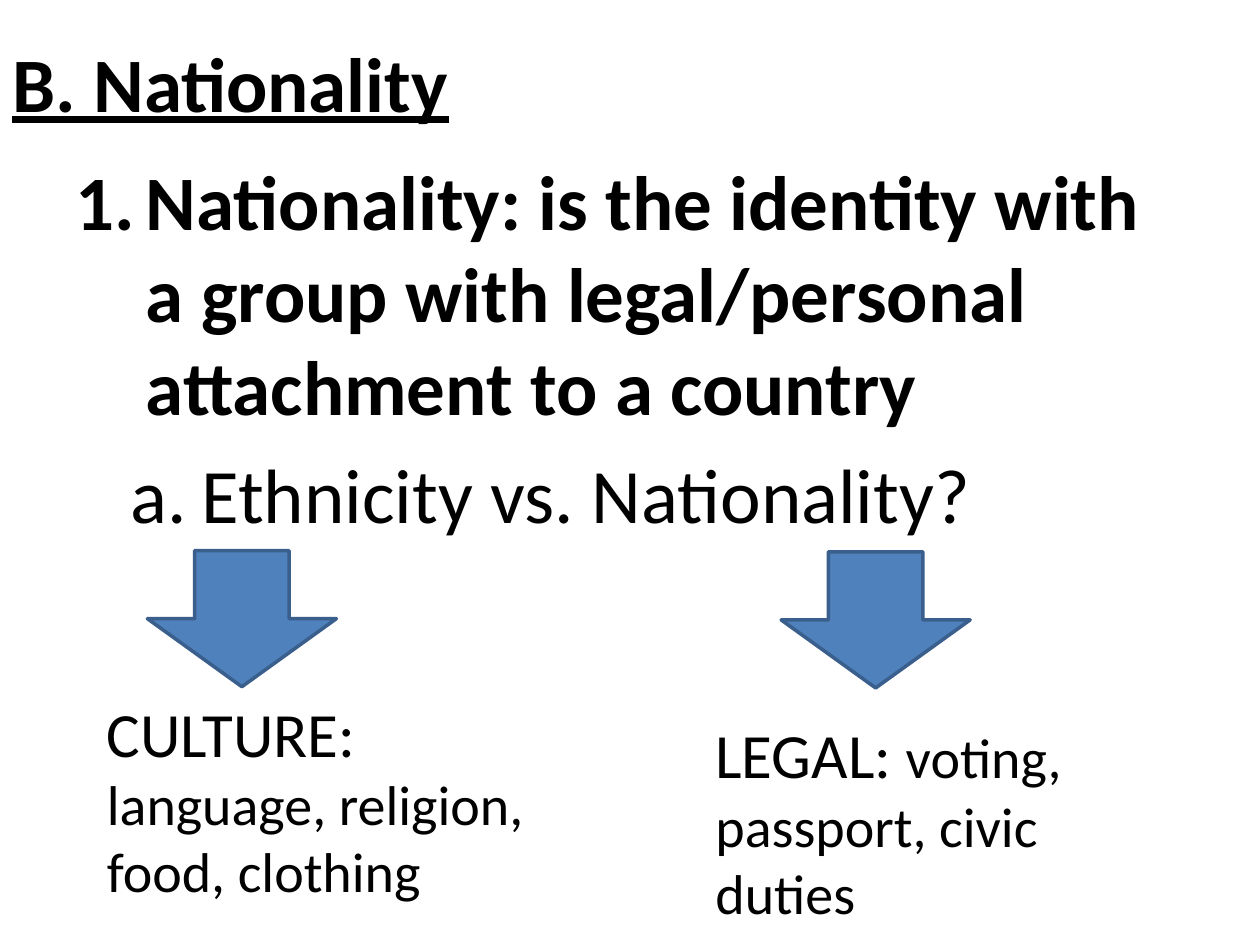
import pptx
import pptx.util
import pptx.dml.color
import pptx.enum.shapes
import pptx.enum.text
import lxml.etree
from pptx.oxml.ns import qn

Inches, Pt = pptx.util.Inches, pptx.util.Pt
RGB = pptx.dml.color.RGBColor.from_string
COLORS = {"text": "000000", "fill": "4F81BD", "line": "3A5F8C"}

deck = pptx.Presentation()
deck.slide_width, deck.slide_height = Inches(10), Inches(7.5)
slide = deck.slides.add_slide(deck.slide_layouts[6])


def add_box(left, top, width, height):
    box = slide.shapes.add_textbox(*map(Inches, (left, top, width, height)))
    box.text_frame.word_wrap = True
    return box.text_frame


def add_run(para, text, size, bold=False):
    run = para.add_run()
    run.text = text
    run.font.name, run.font.size, run.font.bold = "Calibri", Pt(size), bold
    run.font.color.rgb = RGB(COLORS["text"])
    return run


# Title
title = add_box(0, 0.02, 9, 1.25)
title.vertical_anchor = pptx.enum.text.MSO_ANCHOR.MIDDLE
add_run(title.paragraphs[0], "B. Nationality", 44, True).font.underline = True

# Numbered outline
body = add_box(0.5, 1.17, 9, 6.33)
outline = [
    ("Nationality: is the identity with a group with legal/personal "
     "attachment to a country", "arabicPeriod", 0.56, True),
    ("Ethnicity vs. Nationality?", "alphaLcPeriod", 1, False),
]
for level, (text, style, indent, bold) in enumerate(outline):
    para = body.add_paragraph() if level else body.paragraphs[0]
    para.level = level
    props = para._p.get_or_add_pPr()
    props.set("marL", str(Inches(indent)))
    props.set("indent", str(Inches(-0.56)))
    lxml.etree.SubElement(props, qn("a:buAutoNum"), type=style)
    if level:
        para.space_before = Pt(9)
    add_run(para, text, 44, bold)

# Arrows down to the two answers
for left, top in [(6.2, 4.38), (1.17, 4.37)]:
    arrow = slide.shapes.add_shape(
        pptx.enum.shapes.MSO_SHAPE.DOWN_ARROW,
        *map(Inches, (left, top, 1.5, 1.08)))
    arrow.shadow.inherit = False
    arrow.fill.solid()
    arrow.fill.fore_color.rgb = RGB(COLORS["fill"])
    arrow.line.color.rgb = RGB(COLORS["line"])
    arrow.line.width = Pt(2)

# Answers: a large heading word, then its examples
answers = [
    (0.75, 5.46, 3.83, "CULTURE: ", ["language, religion,", "food, clothing"]),
    (5.58, 5.63, 3.33, "LEGAL: ", ["voting, passport, civic duties"]),
]
for left, top, width, head, lines in answers:
    frame = add_box(left, top, width, 1.78)
    frame.auto_size = pptx.enum.text.MSO_AUTO_SIZE.SHAPE_TO_FIT_TEXT
    add_run(frame.paragraphs[0], head, 36)
    for row, line in enumerate(lines):
        para = frame.add_paragraph() if row else frame.paragraphs[0]
        add_run(para, line, 32)

deck.save("out.pptx")
